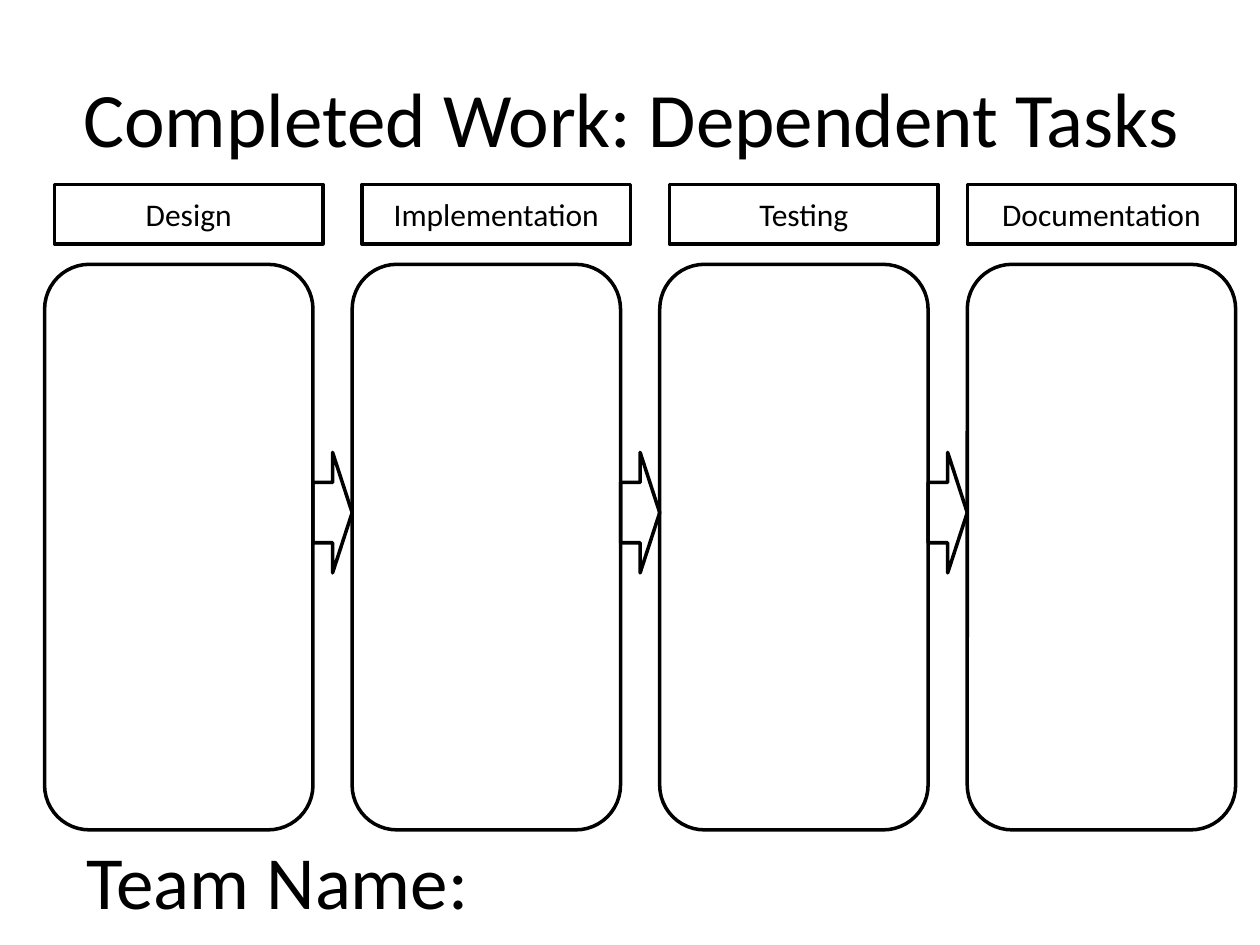
"""Build a slide of four dependent work stages joined by arrows."""
from dataclasses import dataclass

from pptx import Presentation
from pptx.dml.color import RGBColor
from pptx.enum.shapes import MSO_SHAPE
from pptx.enum.text import MSO_ANCHOR, PP_ALIGN
from pptx.util import Cm, Pt

RECT = MSO_SHAPE.RECTANGLE
ROUND = MSO_SHAPE.ROUNDED_RECTANGLE
ARROW = MSO_SHAPE.RIGHT_ARROW
MIDDLE = MSO_ANCHOR.MIDDLE
LEFT, CENTER = PP_ALIGN.LEFT, PP_ALIGN.CENTER


@dataclass
class Theme:
    font: str = "Calibri"
    ink: RGBColor = RGBColor(0, 0, 0)
    title: float = 44
    team: float = 42.9
    label: float = 18
    line: float = 2


theme = Theme()


def write(shape, text, size, align):
    frame = shape.text_frame
    frame.word_wrap = True
    frame.vertical_anchor = MIDDLE
    frame.text = text
    par = frame.paragraphs[0]
    par.alignment = align
    par.font.name = theme.font
    par.font.size = Pt(size)
    par.font.color.rgb = theme.ink


def draw(kind, left, top, width, height):
    shape = slide.shapes.add_shape(kind, Cm(left), Cm(top), Cm(width), Cm(height))
    shape.shadow.inherit = False
    shape.fill.background()
    shape.line.color.rgb = theme.ink
    shape.line.width = Pt(theme.line)
    return shape


deck = Presentation()
deck.slide_width, deck.slide_height = Cm(25.4), Cm(19.05)
slide = deck.slides.add_slide(deck.slide_layouts[5])

title = slide.shapes.title
title.left, title.top, title.width, title.height = Cm(1.3), Cm(0.76), Cm(22.86), Cm(3.18)
write(title, "Completed Work: Dependent Tasks", theme.title, CENTER)

stages = ["Design", "Implementation", "Testing", "Documentation"]
start, pitch, width = 0.9, 6.2, 5.41
last = len(stages) - 1
for i, name in enumerate(stages):
    left = start + i * pitch
    shift = 0.2 if i < last else 0
    label = draw(RECT, left + shift, 3.72, width, 1.2)
    write(label, name, theme.label, CENTER)
    draw(ROUND, left, 5.33, width, 11.4)
    if i < last:
        draw(ARROW, left + width, 9.12, pitch - width, 2.43)

team = slide.shapes.add_textbox(Cm(1.5), Cm(16.15), Cm(22.86), Cm(3.18))
write(team, "Team Name:", theme.team, LEFT)

deck.save("out.pptx")
